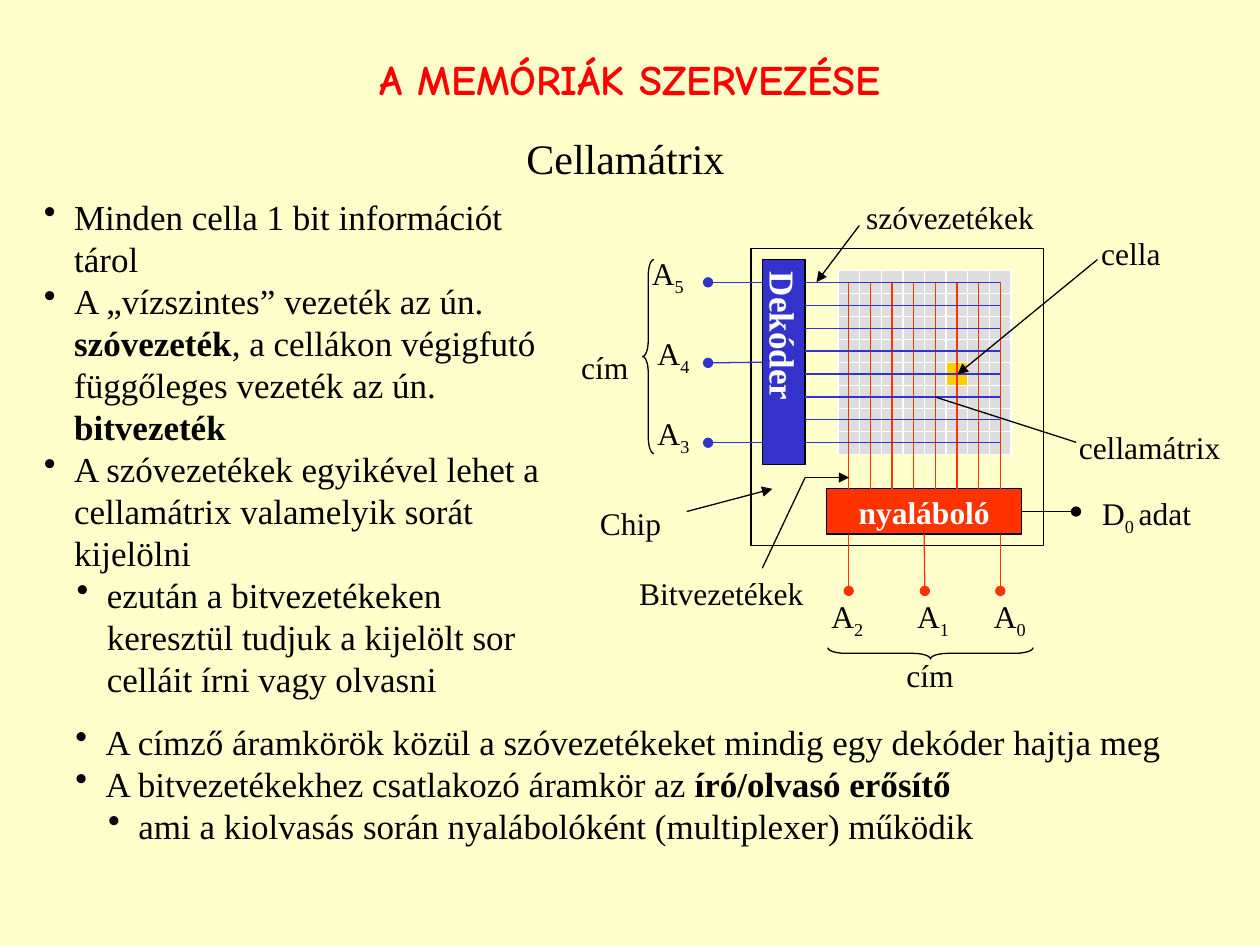
from pptx import Presentation
from pptx.util import Inches, Pt
from pptx.dml.color import RGBColor
from pptx.enum.shapes import MSO_SHAPE, MSO_CONNECTOR
from pptx.enum.text import PP_ALIGN, MSO_ANCHOR, MSO_AUTO_SIZE
from pptx.oxml.ns import qn
from lxml.etree import SubElement

BLACK, WHITE, BLUE, RED = "000000", "FFFFFF", "3333CC", "FF3300"
GRAY, GOLD = "DDDDDD", "FFCC00"
SERIF = "Times New Roman"

# Bullet lists: box, then (level, [(text, style)]); styles: "" plain, "b" bold
BULLET_LISTS = [
    ((0.25, 1.5, 4.17, 4.1), [
        (0, [("Minden cella 1 bit információt tárol", "")]),
        (0, [("A „vízszintes” vezeték az ún. ", ""), ("szóvezeték", "b"),
             (", a cellákon végigfutó függőleges vezeték az ún. ", ""),
             ("bitvezeték", "b")]),
        (0, [("A szóvezetékek egyikével lehet a cellamátrix valamelyik "
              "sorát kijelölni", "")]),
        (1, [("ezután a bitvezetékeken keresztül tudjuk a kijelölt sor "
              "celláit írni vagy olvasni", "")]),
    ]),
    ((0.5, 5.67, 9.08, 1.1), [
        (0, [("A címző áramkörök közül a szóvezetékeket mindig egy dekóder "
              "hajtja meg", "")]),
        (0, [("A bitvezetékekhez csatlakozó áramkör az ", ""),
             ("író/olvasó erősítő", "b")]),
        (1, [("ami a kiolvasás során nyalábolóként (multiplexer) működik", "")]),
    ]),
]

# Diagram labels: left, top, width, runs ("sub" is subscript)
LABELS = [
    (5.07, 1.99, 0.46, [("A", ""), ("5", "sub")]),
    (5.11, 2.62, 0.47, [("A", ""), ("4", "sub")]),
    (5.11, 3.26, 0.47, [("A", ""), ("3", "sub")]),
    (6.49, 4.71, 0.47, [("A", ""), ("2", "sub")]),
    (7.17, 4.71, 0.47, [("A", ""), ("1", "sub")]),
    (7.78, 4.71, 0.47, [("A", ""), ("0", "sub")]),
    (8.64, 3.89, 0.92, [("D", ""), ("0 ", "sub"), ("adat", "")]),
    (4.51, 2.71, 0.58, [("cím", "")]),
    (7.09, 5.16, 0.58, [("cím", "")]),
    (6.77, 1.52, 1.54, [("szóvezetékek", "")]),
    (4.97, 4.51, 1.51, [("Bitvezetékek", "")]),
    (4.66, 3.95, 0.69, [("Chip", "")]),
    (8.64, 1.81, 0.67, [("cella", "")]),
    (8.46, 3.35, 1.33, [("cellamátrix", "")]),
]

# Pointers from the labels: start, end, arrowhead
POINTERS = [
    ((6.82, 1.79), (6.48, 2.24), "triangle"),
    ((6.05, 4.51), (6.39, 3.79), None),
    ((6.39, 3.79), (6.74, 3.79), "triangle"),
    ((5.45, 4.06), (6.13, 3.88), "triangle"),
    ((8.71, 2.06), (7.6, 2.97), "triangle"),
    ((7.42, 3.15), (8.54, 3.51), None),
]

# Braces: box, rotation, curvature
BRACES = [((5.1, 2.06, 0.09, 1.54), 0, 1.42),
          ((7.34, 4.37, 0.09, 1.63), 270, 1.58)]

# Cell grid
N = 8
GRID_X, GRID_Y, GRID_W, GRID_H = 6.65, 2.15, 1.375, 1.455
CELL_W, CELL_H = GRID_W / N, GRID_H / N
MARKED_CELL = (4, 5)
COLS = [GRID_X + (i + 0.5) * CELL_W for i in range(N)]
ROWS = [GRID_Y + (i + 0.5) * CELL_H for i in range(N)]

prs = Presentation()
prs.slide_width, prs.slide_height = Inches(10), Inches(7.5)
s = prs.slides.add_slide(prs.slide_layouts[6])


def rgb(color):
    return RGBColor.from_string(color)


s.background.fill.solid()
s.background.fill.fore_color.rgb = rgb("FFFFCC")


def add_runs(p, runs, size, color=BLACK, font=SERIF):
    for text, style in runs:
        r = p.add_run()
        r.text = text
        r.font.size, r.font.name = Pt(size), font
        r.font.bold = style == "b"
        r.font.color.rgb = rgb(color)
        if style == "sub":
            r.font._element.set("baseline", "-25000")


def add_text(box, runs, size, align=PP_ALIGN.CENTER, anchor=MSO_ANCHOR.MIDDLE,
             wrap=False, **look):
    tf = s.shapes.add_textbox(*map(Inches, box)).text_frame
    tf.word_wrap, tf.vertical_anchor = wrap, anchor
    tf.paragraphs[0].alignment = align
    add_runs(tf.paragraphs[0], runs, size, **look)
    return tf


def add_shape(kind, box, fill=None, line=BLACK):
    sp = s.shapes.add_shape(kind, *map(Inches, box))
    sp.shadow.inherit = False
    if fill:
        sp.fill.solid()
        sp.fill.fore_color.rgb = rgb(fill)
    else:
        sp.fill.background()
    sp.line.color.rgb, sp.line.width = rgb(line), Pt(0.75)
    return sp


def add_block(box, fill, text, size):
    sp = add_shape(MSO_SHAPE.RECTANGLE, box, fill)
    tf = sp.text_frame
    tf.word_wrap, tf.vertical_anchor = False, MSO_ANCHOR.MIDDLE
    tf.paragraphs[0].alignment = PP_ALIGN.CENTER
    add_runs(tf.paragraphs[0], [(text, "b")], size, WHITE)
    return sp


def add_line(start, end, color=BLACK, tail=None):
    c = s.shapes.add_connector(MSO_CONNECTOR.STRAIGHT,
                               *map(Inches, (*start, *end)))
    c.line.color.rgb, c.line.width = rgb(color), Pt(0.75)
    if tail:
        SubElement(c.line._get_or_add_ln(), qn("a:tailEnd"), type=tail)
    SubElement(c._element.spPr, qn("a:effectLst"))
    return c


# Headings
add_text((0.75, 0, 8.5, 1.25), [("A MEMÓRIÁK SZERVEZÉSE", "b")], 24,
         wrap=True, color="FF0000", font="Comic Neue")
add_text((4.08, 1, 2.65, 0.5), [("Cellamátrix", "")], 24, PP_ALIGN.LEFT,
         MSO_ANCHOR.TOP, True)

# Bullet lists
for box, items in BULLET_LISTS:
    tf = s.shapes.add_textbox(*map(Inches, box)).text_frame
    tf.word_wrap = True
    for i, (level, runs) in enumerate(items):
        p = tf.paragraphs[0] if i == 0 else tf.add_paragraph()
        p.level = level
        add_runs(p, runs, 20)
        pPr = p._p.get_or_add_pPr()
        pPr.set("marL", str(Inches((0.24, 0.5)[level])))
        pPr.set("indent", str(-Inches(0.24)))
        SubElement(pPr, qn("a:buChar"), char="•")

# Chip outline, decoder and multiplexer
add_shape(MSO_SHAPE.RECTANGLE, (5.96, 1.97, 2.32, 2.36))
decoder = add_block((6.05, 2.06, 0.34, 1.63), BLUE, "Dekóder", 20)
decoder.text_frame._txBody.bodyPr.set("vert", "eaVert")
mux = add_block((6.56, 3.88, 1.55, 0.36), RED, "nyaláboló", 18)

# Cells
for row in range(N):
    for col in range(N):
        add_shape(MSO_SHAPE.RECTANGLE,
                  (GRID_X + col * CELL_W, GRID_Y + row * CELL_H, CELL_W, CELL_H),
                  GOLD if (row, col) == MARKED_CELL else GRAY, WHITE)

# Bit lines and word lines
for x in COLS:
    add_line((x, ROWS[0]), (x, 3.88), RED)
for y in ROWS:
    add_line((COLS[-1], y), (6.39, y), BLUE)

# Address and data pins
row_pins = [add_line((6.05, y), (5.62, y), BLUE, "oval")
            for y in (ROWS[0], 2.88, ROWS[-1])]
row_pins[1].begin_connect(decoder, 1)
col_pins = [add_line((x, 4.24), (x, 4.69), RED, "oval")
            for x in (COLS[0], 7.34, COLS[-1])]
col_pins[1].begin_connect(mux, 2)
add_line((8.11, 4.06), (8.54, 4.06), tail="oval").begin_connect(mux, 3)

# Braces, labels and pointers
for box, rotation, curve in BRACES:
    brace = add_shape(MSO_SHAPE.LEFT_BRACE, box)
    brace.rotation = rotation
    brace.adjustments[0] = curve
for left, top, width, runs in LABELS:
    add_text((left, top, width, 0.4), runs, 18).auto_size = \
        MSO_AUTO_SIZE.SHAPE_TO_FIT_TEXT
for start, end, tail in POINTERS:
    add_line(start, end, tail=tail)

prs.save("out.pptx")
